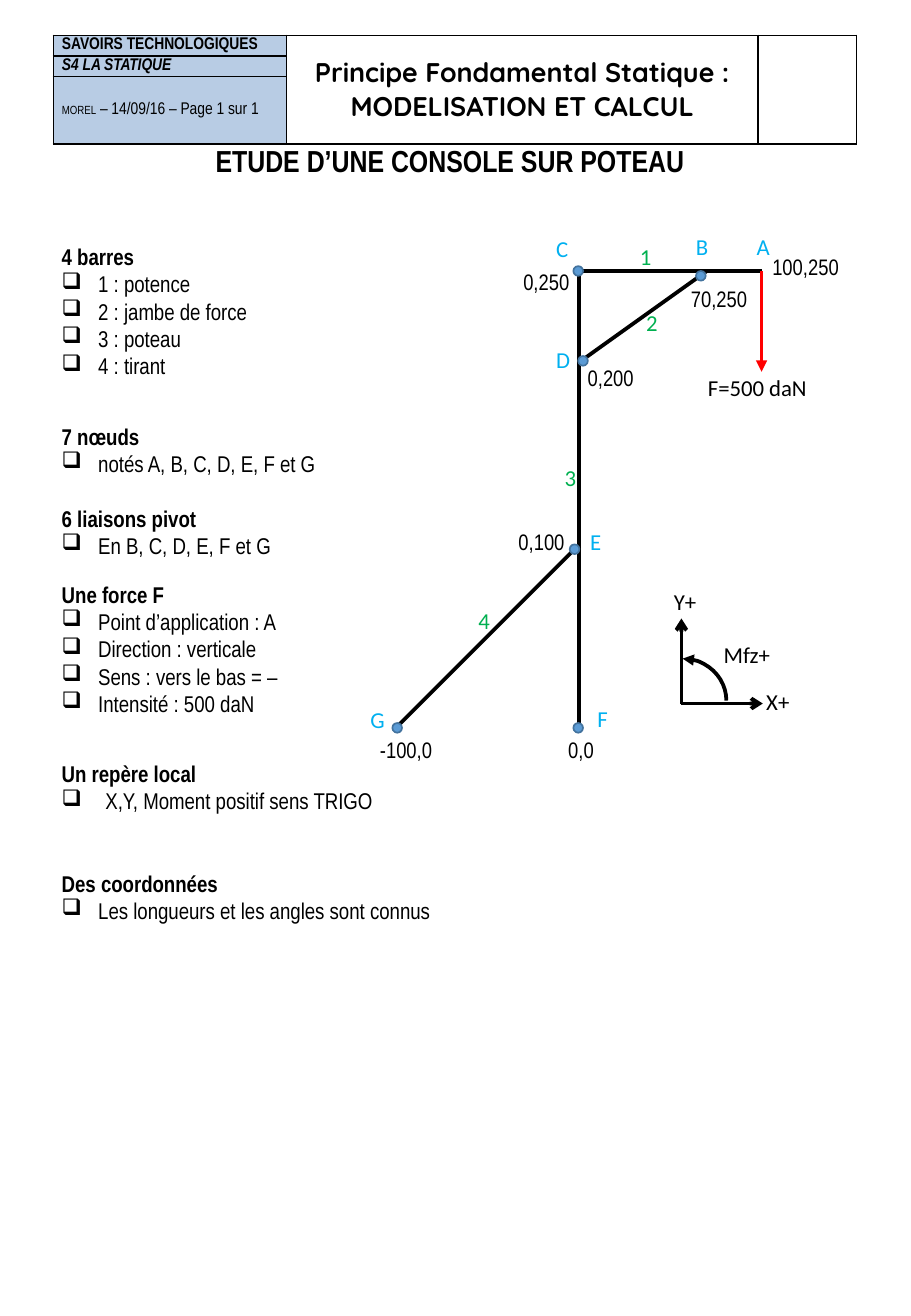
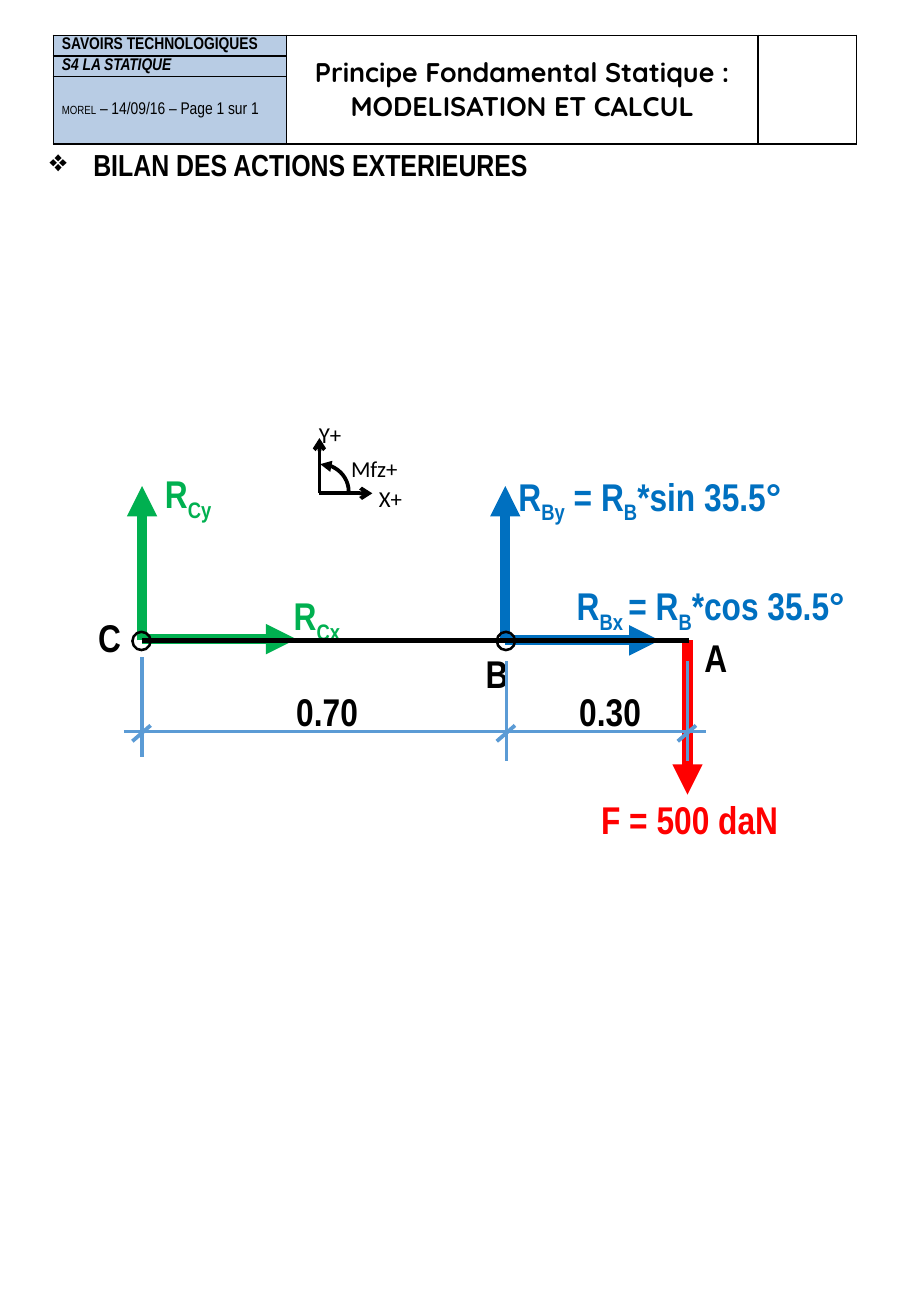
from lxml import etree
from pptx import Presentation
from pptx.dml.color import RGBColor
from pptx.enum.shapes import MSO_CONNECTOR, MSO_SHAPE
from pptx.enum.text import MSO_ANCHOR, PP_ALIGN
from pptx.oxml.ns import qn
from pptx.util import Emu, Pt

LINE, ARC, OVAL = MSO_CONNECTOR.STRAIGHT, MSO_SHAPE.ARC, MSO_SHAPE.OVAL
CENTER, LEFT, MIDDLE = PP_ALIGN.CENTER, PP_ALIGN.LEFT, MSO_ANCHOR.MIDDLE
COLORS = {
    "black": "000000", "white": "FFFFFF", "band": "B8CCE4", "dot": "5B9BD5",
    "dot_edge": "43739E", "red": "FF0000", "green": "00B050", "sky": "00B0F0",
    "blue": "0070C0",
}
NARROW, CALIBRI, QUICKSAND = "Arial Narrow", "Calibri", "Quicksand"
CELL = 91440
COLUMNS, ROWS = 75, 108.3


def grid(*cells):
    """Turn grid cells, ten to the inch, into lengths."""
    return [Emu(round(c * CELL)) for c in cells]


def rgb(name):
    """Look up a colour by name."""
    return RGBColor.from_string(COLORS[name])


def write(p, text, size=13.5, font=NARROW, color="black", bold=False, italic=False):
    """Add text to a paragraph; every second part between underscores is a subscript."""
    for i, part in enumerate(text.split("_")):
        if not part:
            continue
        r = p.add_run()
        r.text = part
        f = r.font
        f.size, f.name, f.bold, f.italic = Pt(size), font, bold, italic
        f.color.rgb = rgb(color)
        if i % 2:
            r._r.get_or_add_rPr().set("baseline", "-25000")


class Sheet:
    """Holds the presentation, its style and the current slide."""

    def __init__(self):
        self.prs = Presentation()
        self.prs.slide_width, self.prs.slide_height = grid(COLUMNS, ROWS)
        self.s = None

    def new_slide(self):
        """Start a blank slide with the shared header."""
        self.s = self.prs.slides.add_slide(self.prs.slide_layouts[6])
        self.header()

    def header(self):
        """Draw the title block table."""
        table = self.s.shapes.add_table(3, 3, *grid(4.4, 2.9, 66.1, 8.9)).table
        table.first_row = table.horz_banding = False
        for col, width in zip(table.columns, grid(19.2, 38.8, 8.1)):
            col.width = width
        for row, height in zip(table.rows, grid(1.7, 1.7, 5.5)):
            row.height = height
        for c in (1, 2):
            table.cell(0, c).merge(table.cell(2, c))
        for r in range(3):
            for c in range(3):
                self.style_cell(table.cell(r, c), "band" if c == 0 else "white")
        first, second, third = (table.cell(r, 0).text_frame.paragraphs[0] for r in range(3))
        write(first, "SAVOIRS TECHNOLOGIQUES", size=10, bold=True)
        write(second, "S4 LA STATIQUE", size=10, bold=True, italic=True)
        write(third, "MOREL", size=7)
        write(third, " – 14/09/16 – Page 1 sur 1", size=10)
        tf = table.cell(0, 1).text_frame
        for title in ("Principe Fondamental Statique :", "MODELISATION ET CALCUL"):
            self.paragraph(tf, title, align=CENTER, size=16, font=QUICKSAND, bold=True)

    def style_cell(self, cell, fill):
        """Give a table cell its margins, borders and fill."""
        cell.vertical_anchor = MIDDLE
        cell.margin_left, cell.margin_right = grid(0.7, 0.7)
        cell.margin_top = cell.margin_bottom = 0
        tcPr = cell._tc.get_or_add_tcPr()
        for side in ("a:lnL", "a:lnR", "a:lnT", "a:lnB"):
            ln = etree.SubElement(tcPr, qn(side), w=str(Pt(1)))
            solid = etree.SubElement(ln, qn("a:solidFill"))
            etree.SubElement(solid, qn("a:srgbClr"), val=COLORS["black"])
        cell.fill.solid()
        cell.fill.fore_color.rgb = rgb(fill)

    def box(self, x, y, w, h):
        """Add a wrapping text box and return its frame."""
        tf = self.s.shapes.add_textbox(*grid(x, y, w, h)).text_frame
        tf.word_wrap = True
        return tf

    def paragraph(self, tf, text, bullet=None, indent=3, before=0, align=LEFT, **fmt):
        """Fill the first empty paragraph or add one."""
        p = tf.paragraphs[0]
        if p.runs:
            p = tf.add_paragraph()
        p.alignment = align
        if before:
            p.space_before = Pt(before)
        if bullet:
            pPr = p._p.get_or_add_pPr()
            pPr.set("marL", str(round(indent * CELL)))
            pPr.set("indent", str(-round(indent * CELL)))
            etree.SubElement(pPr, qn("a:buChar"), char=bullet)
        write(p, text, **fmt)

    def label(self, x, y, w, text, h=3.3, **fmt):
        """Add a one-line label."""
        tf = self.box(x, y, w, h)
        tf.margin_right = 0
        self.paragraph(tf, text, **fmt)

    def big_label(self, x, y, w, text, color="black"):
        """Add a large bold label."""
        self.label(x, y, w, text, h=4.9, size=22.9, color=color, bold=True)

    def stroke(self, sp, color, width, head=None, tail=None):
        """Set the outline and arrowheads of a shape or connector."""
        sp.line.color.rgb = rgb(color)
        sp.line.width = Pt(width)
        ln = sp.line._get_or_add_ln()
        for tag, kind in (("a:headEnd", head), ("a:tailEnd", tail)):
            if kind:
                etree.SubElement(ln, qn(tag), type=kind)

    def line(self, x1, y1, x2, y2, color="black", width=2.25, **ends):
        """Draw a straight line or arrow."""
        sp = self.s.shapes.add_connector(LINE, *grid(x1, y1, x2, y2))
        self.stroke(sp, color, width, **ends)
        etree.SubElement(sp._element.spPr, qn("a:effectLst"))

    def shape(self, kind, x, y, w, h, fill=None, color="black", width=2.25, **ends):
        """Draw a preset shape."""
        sp = self.s.shapes.add_shape(kind, *grid(x, y, w, h))
        sp.shadow.inherit = False
        if fill:
            sp.fill.solid()
            sp.fill.fore_color.rgb = rgb(fill)
        else:
            sp.fill.background()
        self.stroke(sp, color, width, **ends)

    def axes(self, x, y, k=1.0):
        """Draw the local axes at scale k."""
        self.line(x, y - 7 * k, x, y, head="arrow")
        self.line(x, y, x + 6.7 * k, y, tail="arrow")
        self.shape(ARC, x - 3.5 * k, y - 3.7 * k, 7.2 * k, 6.9 * k, head="triangle")
        for text, dx, dy, w in (("X+", 6, -1.8, 6.5), ("Y+", -1.6, -10, 6.5),
                                ("Mfz+", 2.5, -5.7, 9)):
            self.label(x + dx * k, y + dy * k, w * k, text, font=CALIBRI)


SECTIONS = (
    (38.1, "4 barres", ("1 : potence", "2 : jambe de force", "3 : poteau", "4 : tirant")),
    (25.4, "7 nœuds", ("notés A, B, C, D, E, F et G",)),
    (16.3, "6 liaisons pivot", ("En B, C, D, E, F et G",)),
    (12.7, "Une force F", ("Point d’application : A", "Direction : verticale",
                           "Sens : vers le bas = –", "Intensité : 500 daN")),
    (25.4, "Un repère local", ("X,Y, Moment positif sens TRIGO",)),
    (32.6, "Des coordonnées", ("Les longueurs et les angles sont connus",)),
)
NODES = {"A": (100, 250), "B": (70, 250), "C": (0, 250), "D": (0, 200),
         "E": (0, 100), "F": (0, 0), "G": (-100, 0)}
BARS = ("FC", "CA", "BD", "EG")
DOTS = ((32.3, 59.5), (47.2, 59.5), (46.9, 44.8), (47.6, 29.3), (47.2, 21.9), (57.3, 22.3))
BAR_LABELS = ((51.7, 19.5), (52.2, 24.9), (45.5, 37.7), (38.4, 49.4))
NODE_LABELS = {
    "A": (61.3, 18.7, 62.6, 20.3), "B": (56.3, 18.7, 55.9, 23),
    "C": (44.8, 18.8, 42.1, 21.6), "D": (44.8, 28, 47.4, 29.5),
    "E": (47.6, 42.9, 41.7, 43), "F": (48.2, 57.5, 45.8, 60.1),
    "G": (29.5, 57.6, 30.3, 60.1),
}


def place(node):
    """Give the grid position of a node of the bracket."""
    x, y = NODES[node]
    return 47.7 + 0.15 * x, 59.8 - 0.15 * y


def bracket_slide(sheet):
    """Describe the bracket and draw its bars, nodes and load."""
    sheet.new_slide()
    tf = sheet.box(4.1, 11.2, 65.9, 66)
    sheet.paragraph(tf, "ETUDE D’UNE CONSOLE SUR POTEAU", align=CENTER, size=18, bold=True)
    for gap, heading, items in SECTIONS:
        sheet.paragraph(tf, heading, before=gap, bold=True)
        for item in items:
            indent = 3.6 if item.startswith("X,Y") else 3
            sheet.paragraph(tf, item, bullet="❑", indent=indent)
    for start, end in BARS:
        sheet.line(*place(start), *place(end))
    for x, y in DOTS:
        sheet.shape(OVAL, x, y, 0.8, 0.8, fill="dot", color="dot_edge", width=1)
    x, y = place("A")
    sheet.line(x, y, x, y + 8.3, color="red", tail="triangle")
    sheet.label(57.3, 30.3, 12.7, "F=500 daN", font=CALIBRI)
    for number, (x, y) in enumerate(BAR_LABELS, 1):
        sheet.label(x, y, 3.8, str(number), font=CALIBRI, color="green")
    for node, (x, y, cx, cy) in NODE_LABELS.items():
        sheet.label(x, y, 3.8, node, font=CALIBRI, color="sky")
        sheet.label(cx, cy, 7.6, "{},{}".format(*NODES[node]), size=13.3)
    sheet.axes(56.1, 57.9)


def actions_slide(sheet):
    """Draw the external actions on the beam and its dimensions."""
    sheet.new_slide()
    c, b, a, beam, dim = 11.7, 41.7, 56.6, 52.7, 60.2
    reach = 12.7
    for x, y, color in ((b - 0.1, beam, "blue"), (c, beam - 0.1, "green")):
        sheet.line(x, beam, x, beam - reach, color=color, width=6, tail="triangle")
        sheet.line(x, y, x + reach, y, color=color, width=6, tail="triangle")
    sheet.line(a, beam, a, beam + reach, color="red", width=6, tail="triangle")
    for x, y, w, text, color in (
        (46.5, 47.4, 24.6, "R_Bx _= R_B_*cos 35.5°", "blue"),
        (41.7, 38.4, 26.1, "R_By_ = R_B_*sin 35.5°", "blue"),
        (12.6, 38.2, 8.8, "R_Cy", "green"),
        (23.2, 48.2, 9, "R_Cx", "green"),
        (48.5, 65, 16.8, "F = 500 daN", "red"),
    ):
        sheet.big_label(x, y, w, text, color)
    sheet.line(c, beam, a + 0.1, beam, width=3)
    for x in (c, b):
        sheet.shape(OVAL, x - 0.8, beam - 0.7, 1.5, 1.5, width=1.5)
    for x, y, w, text in ((57, 51.7, 3.8, "A"), (39, 53, 3.8, "B"), (7.1, 50, 3.9, "C")):
        sheet.big_label(x, y, w, text)
    sheet.line(c - 1.5, dim, a + 1.5, dim, color="dot")
    for x, top in ((c, 54.1), (b, 54.4), (a, 54.4)):
        sheet.line(x, top, x, top + 8.2, color="dot")
        sheet.line(x - 0.8, dim + 0.8, x + 0.7, dim - 0.5, color="dot")
    for x, text in ((23.4, "0.70"), (46.7, "0.30")):
        sheet.big_label(x, 56.1, 7.8, text)
    sheet.axes(26.3, 40.6, k=0.65)
    tf = sheet.box(3.1, 11.5, 68.3, 4)
    sheet.paragraph(tf, "BILAN DES ACTIONS EXTERIEURES", bullet="❖", indent=3.6,
                    size=18, bold=True)


def main():
    """Build both slides and save them."""
    sheet = Sheet()
    bracket_slide(sheet)
    actions_slide(sheet)
    sheet.prs.save("out.pptx")


if __name__ == "__main__":
    main()
